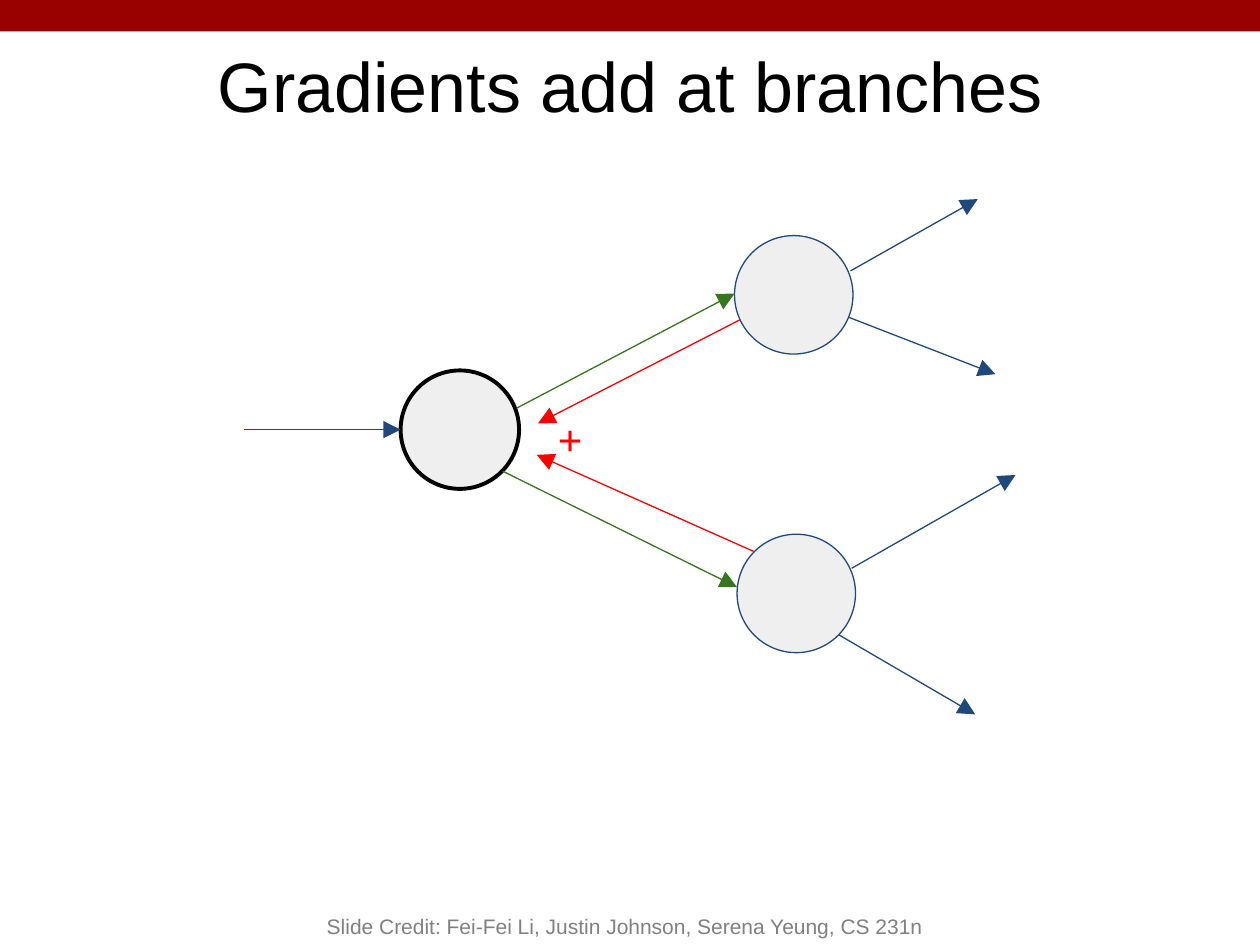
from dataclasses import dataclass
from lxml import etree
from pptx import Presentation
from pptx import util as u
from pptx.dml.color import RGBColor
from pptx.enum import shapes, text
from pptx.oxml import ns


@dataclass(frozen=True)
class Theme:
    font: str = "Arial"
    bar: str = "990000"
    node: str = "EFEFEF"
    ink: str = "000000"
    edge: str = "1F497D"
    ahead: str = "38761D"
    back: str = "FF0000"
    muted: str = "808080"
    title: int = 40
    sign: int = 24
    note: int = 12
    thin: float = 0.75
    bold: float = 2.25


class Deck:
    def __init__(self, theme):
        self.theme = theme
        self.file = Presentation()
        self.file.slide_width = u.Inches(10)
        self.file.slide_height = u.Inches(7.5)
        self.slide = self.file.slides.add_slide(self.file.slide_layouts[6])

    def shape(self, kind, box, fill):
        item = self.slide.shapes.add_shape(kind, *map(u.Inches, box))
        item.shadow.inherit = False
        item.fill.solid()
        item.fill.fore_color.rgb = RGBColor.from_string(fill)
        item.line.fill.background()
        return item

    def stroke(self, item, color, width):
        item.line.color.rgb = RGBColor.from_string(color)
        item.line.width = u.Pt(width)

    def bar(self, box):
        self.shape(shapes.MSO_SHAPE.RECTANGLE, box, self.theme.bar)

    def node(self, left, top, color, width):
        size = 0.94
        item = self.shape(shapes.MSO_SHAPE.OVAL, (left, top, size, size), self.theme.node)
        self.stroke(item, color, width)

    def arrow(self, start, end, color):
        item = self.slide.shapes.add_connector(
            shapes.MSO_CONNECTOR.STRAIGHT, *map(u.Inches, start + end))
        self.stroke(item, color, self.theme.thin)
        props = item.element.spPr
        etree.SubElement(props.find(ns.qn("a:ln")), ns.qn("a:tailEnd"),
                         type="triangle", w="lg", len="lg")
        etree.SubElement(props, ns.qn("a:effectLst"))

    def label(self, words, box, size, color, align=text.PP_ALIGN.LEFT,
              anchor=text.MSO_ANCHOR.TOP, inset=0.1):
        frame = self.slide.shapes.add_textbox(*map(u.Inches, box)).text_frame
        frame.word_wrap = True
        frame.vertical_anchor = anchor
        frame.margin_left = frame.margin_right = u.Inches(0.1)
        frame.margin_top = frame.margin_bottom = u.Inches(inset)
        line = frame.paragraphs[0]
        line.text = words
        line.alignment = align
        line.font.name = self.theme.font
        line.font.size = u.Pt(size)
        line.font.color.rgb = RGBColor.from_string(color)


def main():
    look = Theme()
    deck = Deck(look)
    deck.bar((0, 0, 10, 0.25))

    deck.node(3.18, 2.94, look.ink, look.bold)
    for left, top in ((5.83, 1.87), (5.85, 4.24)):
        deck.node(left, top, look.edge, look.thin)

    flows = {
        look.ahead: (((4.1, 3.24), (5.83, 2.33)), ((3.99, 3.74), (5.85, 4.66))),
        look.back: (((5.87, 2.54), (4.27, 3.36)), ((5.99, 4.38), (4.26, 3.61))),
        look.edge: (
            ((6.75, 2.15), (7.76, 1.58)),
            ((6.74, 2.52), (7.9, 2.97)),
            ((6.76, 4.51), (8.06, 3.77)),
            ((6.66, 5.04), (7.74, 5.67)),
            ((1.94, 3.41), (3.18, 3.41)),
        ),
    }
    for color, pairs in flows.items():
        for start, end in pairs:
            deck.arrow(start, end, color)

    mid = text.PP_ALIGN.CENTER
    deck.label("+", (4.33, 3.18, 0.43, 0.45), look.sign, look.back)
    deck.label("Gradients add at branches", (0.34, 0.25, 9.32, 0.84),
               look.title, look.ink, mid, text.MSO_ANCHOR.MIDDLE)
    deck.label("Slide Credit: Fei-Fei Li, Justin Johnson, Serena Yeung, CS 231n",
               (2, 7, 5.92, 0.5), look.note, look.muted, mid,
               text.MSO_ANCHOR.BOTTOM, 0.05)
    deck.file.save("out.pptx")


if __name__ == "__main__":
    main()
